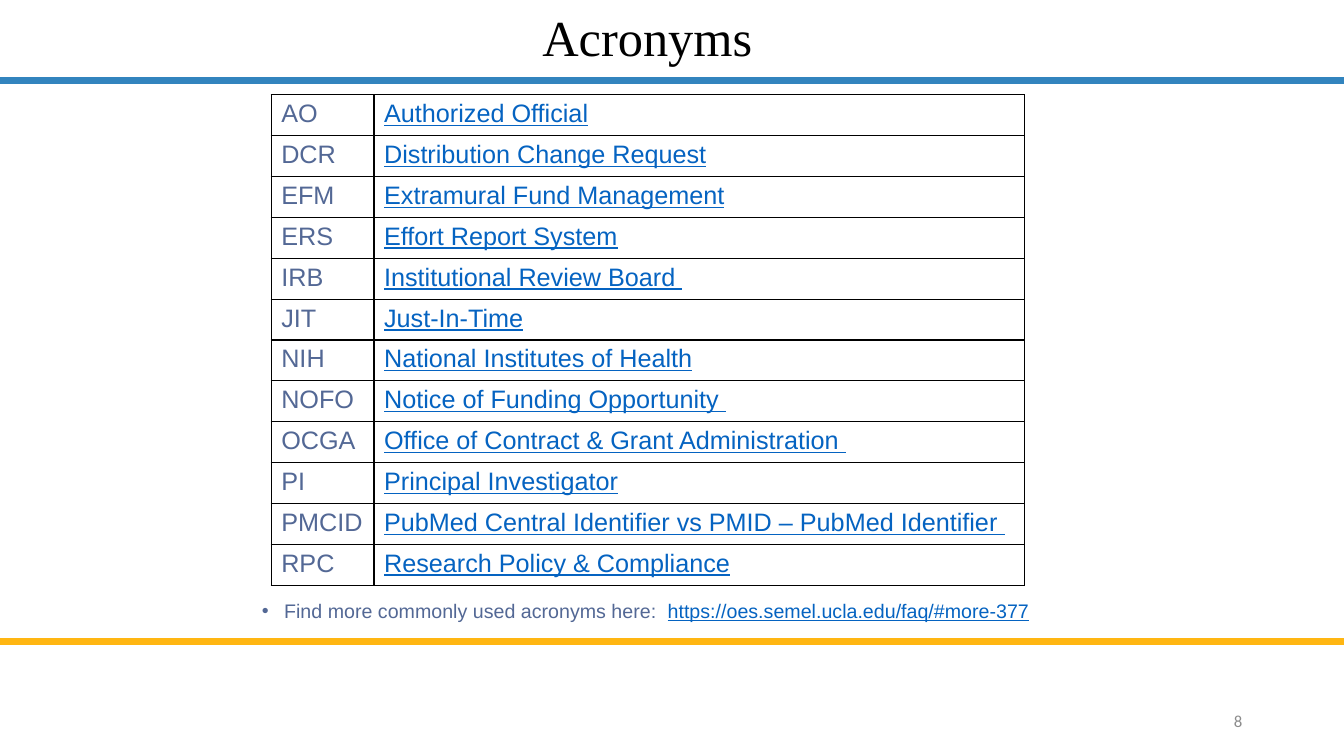
"""Build the Acronyms slide."""
from lxml import etree
from pptx import Presentation
from pptx.dml.color import RGBColor
from pptx.enum.shapes import MSO_CONNECTOR
from pptx.enum.text import MSO_ANCHOR, PP_ALIGN
from pptx.oxml.ns import qn
from pptx.util import Inches, Pt

STRAIGHT = MSO_CONNECTOR.STRAIGHT
TOP, MIDDLE = MSO_ANCHOR.TOP, MSO_ANCHOR.MIDDLE
LEFT, CENTER, RIGHT = PP_ALIGN.LEFT, PP_ALIGN.CENTER, PP_ALIGN.RIGHT
BLACK = RGBColor(0x00, 0x00, 0x00)
WHITE = RGBColor(0xFF, 0xFF, 0xFF)
SLATE = RGBColor(0x53, 0x68, 0x95)
LINK = RGBColor(0x05, 0x63, 0xC1)
GRAY = RGBColor(0x8C, 0x8C, 0x8C)
BLUE = RGBColor(0x32, 0x84, 0xBE)
GOLD = RGBColor(0xFF, 0xB6, 0x12)

TITLE = "Acronyms"
ACRONYMS = [
    ("AO", "Authorized Official"),
    ("DCR", "Distribution Change Request"),
    ("EFM", "Extramural Fund Management"),
    ("ERS", "Effort Report System"),
    ("IRB", "Institutional Review Board "),
    ("JIT", "Just-In-Time"),
    ("NIH", "National Institutes of Health"),
    ("NOFO", "Notice of Funding Opportunity "),
    ("OCGA", "Office of Contract & Grant Administration "),
    ("PI", "Principal Investigator"),
    ("PMCID", "PubMed Central Identifier vs PMID – PubMed Identifier "),
    ("RPC", "Research Policy & Compliance"),
]
NOTE = "Find more commonly used acronyms here:  "
NOTE_URL = "https://oes.semel.ucla.edu/faq/#more-377"
PAGE = "8"
RULES = [(0.8, BLUE), (6.36, GOLD)]
SLIDE_W, SLIDE_H = 13.33, 7.5
TABLE_X, TABLE_Y, TABLE_H = 2.69, 0.94, 4.87
COL_WIDTHS = (1.02, 6.45)


def add_run(p, text, size, color, font="Arial", underline=None):
    r = p.add_run()
    r.text = text
    r.font.name, r.font.size, r.font.underline = font, Pt(size), underline
    r.font.color.rgb = color


def add_box(s, x, y, w, h, anchor, align):
    tf = s.shapes.add_textbox(Inches(x), Inches(y), Inches(w), Inches(h)).text_frame
    tf.word_wrap = True
    tf.vertical_anchor = anchor
    p = tf.paragraphs[0]
    p.alignment = align
    return p


def add_rule(s, y, color):
    line = s.shapes.add_connector(STRAIGHT, 0, Inches(y), Inches(SLIDE_W), Inches(y))
    line.line.color.rgb = color
    line.line.width = Pt(5)
    etree.SubElement(line._element.spPr, qn("a:effectLst"))


def style_cell(cell):
    tc_pr = cell._tc.get_or_add_tcPr()
    for side in ("lnL", "lnR", "lnT", "lnB"):
        ln = etree.SubElement(tc_pr, qn(f"a:{side}"), w=str(Pt(1)))
        fill = etree.SubElement(ln, qn("a:solidFill"))
        etree.SubElement(fill, qn("a:srgbClr"), val=str(BLACK))
    cell.fill.solid()
    cell.fill.fore_color.rgb = WHITE


def add_acronym_table(s):
    table = s.shapes.add_table(
        len(ACRONYMS), len(COL_WIDTHS), Inches(TABLE_X), Inches(TABLE_Y),
        Inches(sum(COL_WIDTHS)), Inches(TABLE_H)).table
    table.first_row = table.horz_banding = False
    for col, width in zip(table.columns, COL_WIDTHS):
        col.width = Inches(width)
    for row, (acronym, meaning) in enumerate(ACRONYMS):
        table.rows[row].height = Inches(TABLE_H / len(ACRONYMS))
        for col, (text, color, underline) in enumerate(
                [(acronym, SLATE, None), (meaning, LINK, True)]):
            cell = table.cell(row, col)
            style_cell(cell)
            add_run(cell.text_frame.paragraphs[0], text, 18, color, underline=underline)


def main():
    prs = Presentation()
    prs.slide_width, prs.slide_height = Inches(SLIDE_W), Inches(SLIDE_H)
    s = prs.slides.add_slide(prs.slide_layouts[6])
    for y, color in RULES:
        add_rule(s, y, color)

    p = add_box(s, 2.91, -0.12, 7.02, 1.04, MIDDLE, CENTER)
    p.line_spacing = 0.9
    add_run(p, TITLE, 36, BLACK, "Times New Roman")

    p = add_box(s, 2.47, 5.92, 9.62, 0.54, TOP, LEFT)
    p.line_spacing = 0.9
    p_pr = p._p.get_or_add_pPr()
    p_pr.set("marL", str(Inches(0.25)))
    p_pr.set("indent", str(Inches(-0.22)))
    etree.SubElement(p_pr, qn("a:buFont"), typeface="Arial")
    etree.SubElement(p_pr, qn("a:buChar"), char="•")
    add_run(p, NOTE, 14, SLATE)
    add_run(p, NOTE_URL, 14, LINK, underline=True)

    add_acronym_table(s)
    p = add_box(s, 9.42, 6.95, 3, 0.4, MIDDLE, RIGHT)
    add_run(p, PAGE, 12, GRAY, "Calibri")
    prs.save("out.pptx")


if __name__ == "__main__":
    main()
